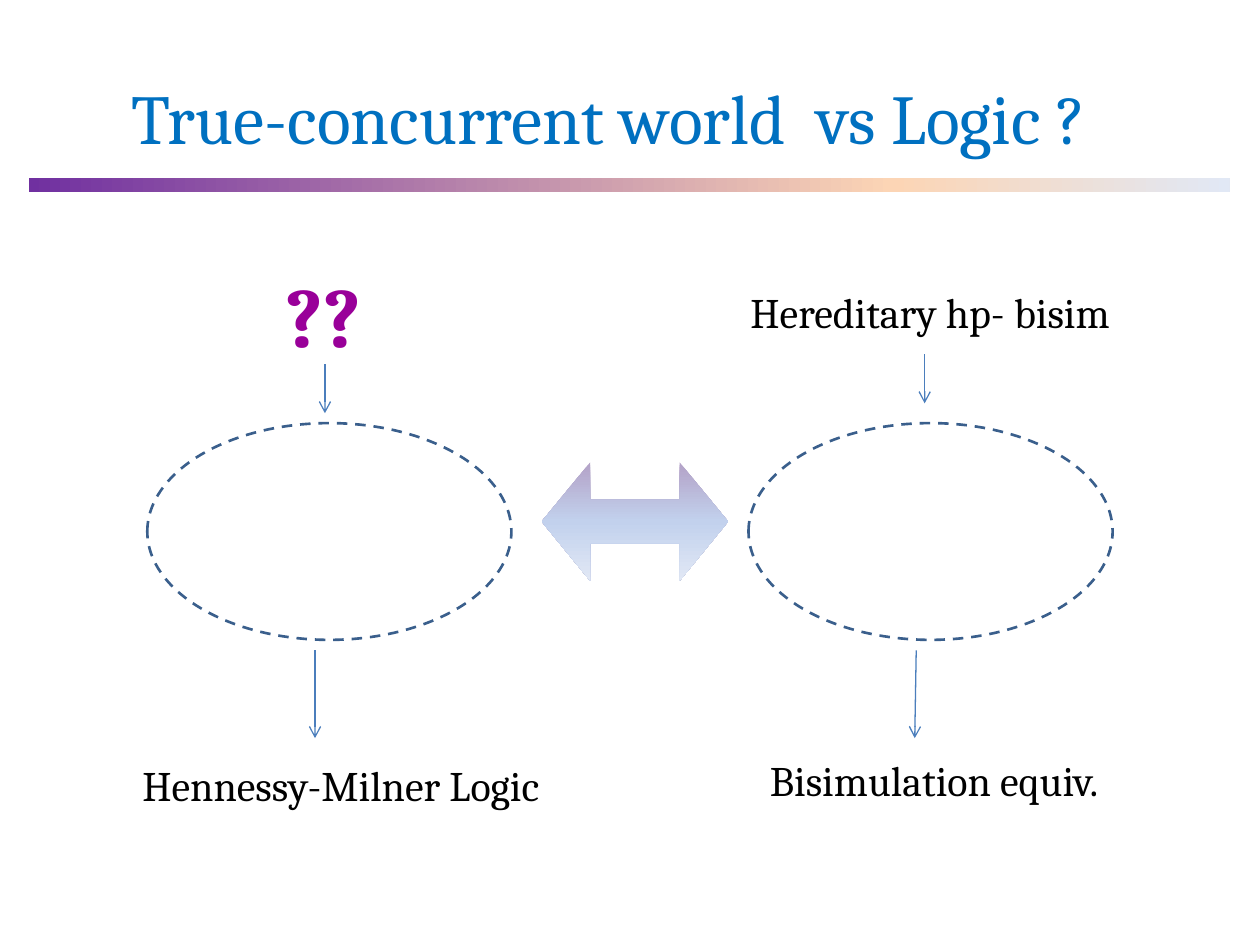
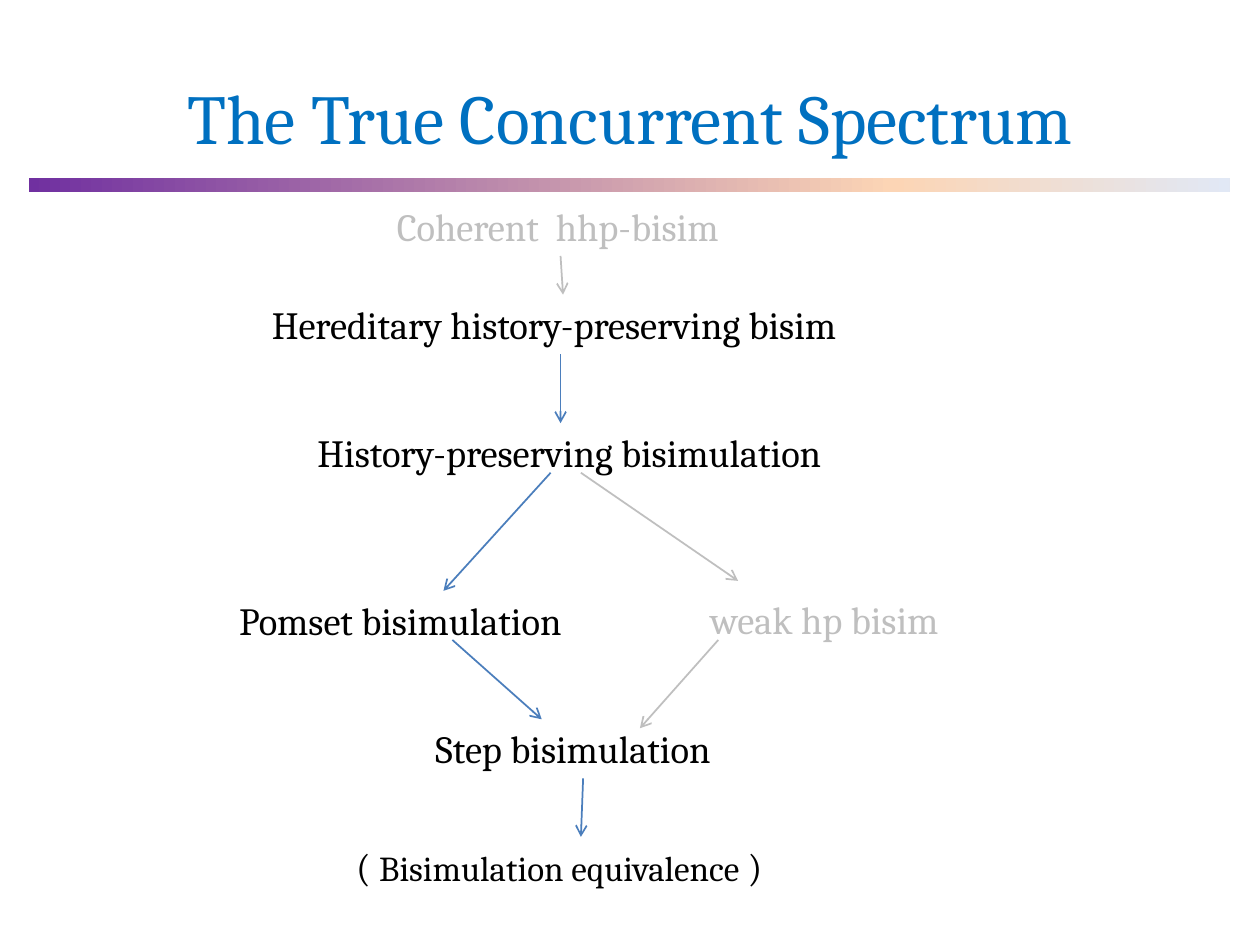
from copy import deepcopy
from dataclasses import dataclass

from lxml.etree import SubElement
from pptx import Presentation
from pptx.dml.color import RGBColor
from pptx.enum.dml import MSO_LINE
from pptx.enum.shapes import MSO_CONNECTOR, MSO_SHAPE
from pptx.enum.text import MSO_ANCHOR, MSO_AUTO_SIZE, PP_ALIGN
from pptx.oxml.ns import qn
from pptx.shapes.autoshape import Shape
from pptx.shapes.connector import Connector
from pptx.slide import Slide
from pptx.util import Cm, Pt

FONT = "Cambria"
BLACK = RGBColor(0x00, 0x00, 0x00)
GREY = RGBColor(0xBF, 0xBF, 0xBF)
TITLE_BLUE = RGBColor(0x00, 0x70, 0xC0)
ARROW_BLUE = RGBColor(0x4B, 0x7E, 0xBC)
OUTLINE_BLUE = RGBColor(0x3A, 0x5F, 0x8C)
MAGENTA = RGBColor(0x99, 0x00, 0x99)
PURPLE = RGBColor(0x70, 0x30, 0xA0)
PEACH = RGBColor(0xFC, 0xD5, 0xB5)
LILAC = RGBColor(0xB3, 0xA2, 0xC7)
SKY = RGBColor(0xC2, 0xD1, 0xED)
PALE_BLUE = RGBColor(0xE1, 0xE8, 0xF5)

BAND_STOPS = [(0, PURPLE), (0.72, PEACH), (1, PALE_BLUE)]
EXCHANGE_STOPS = [(0, LILAC), (0.5, SKY), (1, PALE_BLUE)]


@dataclass(frozen=True)
class Label:
    """Text on one line with its box in centimetres."""

    text: str
    left: float
    top: float
    width: float
    height: float = 1.19
    size: int = 22
    color: RGBColor = BLACK
    bold: bool = False
    centred: bool = False
    anchor: MSO_ANCHOR = MSO_ANCHOR.TOP


@dataclass(frozen=True)
class Arrow:
    """Arrow between two points in centimetres."""

    start: tuple[float, float]
    end: tuple[float, float]
    color: RGBColor = ARROW_BLUE
    weight: float = 1


WORLD_LABELS = [
    Label("??", 0.41, 5.18, 12.22, 2.16, 48, MAGENTA, True, True),
    Label("Hereditary hp- bisim", 14.88, 5.66, 8.23, 1.27, 24),
    Label("Bisimulation equiv.", 15.27, 15.09, 7.57, 1.27, 24),
    Label("Hennessy-Milner Logic", 2.62, 15.19, 9.09, 1.27, 24),
]
WORLD_ARROWS = [
    Arrow((18.64, 7.14), (18.64, 8.13), weight=0.75),
    Arrow((18.47, 13.11), (18.44, 14.88), weight=0.75),
    Arrow((6.55, 7.34), (6.55, 8.33), weight=0.75),
    Arrow((6.35, 13.11), (6.35, 14.88), weight=0.75),
]
SPECTRUM_LABELS = [
    Label("Coherent  hhp-bisim", 7.75, 3.96, 7.52, color=GREY),
    Label("Hereditary history-preserving bisim", 5.23, 5.94, 12.65),
    Label("History-preserving bisimulation", 6.15, 8.53, 11.35),
    Label("Pomset bisimulation", 4.57, 11.91, 7.47),
    Label("weak hp bisim", 14.07, 11.89, 5.36, color=GREY),
]
STEP = Label("Step bisimulation", 8.53, 14.5, 6.45)
EQUIVALENCE = Label("( ", 6.93, 16.87, 9.17)
SPECTRUM_ARROWS = [
    Arrow((11.3, 5.16), (11.35, 5.94), GREY),
    Arrow((11.3, 7.14), (11.3, 8.53)),
    Arrow((11.1, 9.53), (8.94, 11.91)),
    Arrow((11.71, 9.53), (14.88, 11.71), GREY),
    Arrow((9.12, 12.9), (10.92, 14.5)),
    Arrow((14.48, 12.9), (12.9, 14.68), GREY),
]
STEP_TO_EQUIVALENCE = Arrow((11.76, 15.69), (11.71, 16.87))


def draw_label(slide: Slide, label: Label) -> Shape:
    """Draw a label and return its box."""
    box = slide.shapes.add_textbox(
        Cm(label.left), Cm(label.top), Cm(label.width), Cm(label.height)
    )
    frame = box.text_frame
    frame.text = label.text
    frame.word_wrap = label.centred
    frame.vertical_anchor = label.anchor
    if not label.centred:
        frame.auto_size = MSO_AUTO_SIZE.SHAPE_TO_FIT_TEXT
    paragraph = frame.paragraphs[0]
    paragraph.alignment = PP_ALIGN.CENTER if label.centred else PP_ALIGN.LEFT
    style_run(paragraph.runs[0], label.size, label.color, label.bold)
    return box


def style_run(run, size: int, color: RGBColor, bold: bool = False) -> None:
    """Give a run its font."""
    run.font.name = FONT
    run.font.size = Pt(size)
    run.font.color.rgb = color
    run.font.bold = bold


def draw_arrow(slide: Slide, arrow: Arrow) -> Connector:
    """Draw a straight line with an open head at its end."""
    line = slide.shapes.add_connector(
        MSO_CONNECTOR.STRAIGHT, *map(Cm, arrow.start + arrow.end)
    )
    line.line.color.rgb = arrow.color
    line.line.width = Pt(arrow.weight)
    SubElement(line.line._get_or_add_ln(), qn("a:tailEnd"), type="arrow")
    SubElement(line._element.spPr, qn("a:effectLst"))
    return line


def draw_shape(
    slide: Slide, preset: MSO_SHAPE, left: float, top: float, width: float, height: float
) -> Shape:
    """Draw a preset shape without a shadow."""
    shape = slide.shapes.add_shape(preset, Cm(left), Cm(top), Cm(width), Cm(height))
    shape.shadow.inherit = False
    return shape


def fill_gradient(shape: Shape, stops: list[tuple[float, RGBColor]], angle: int) -> None:
    """Fill a shape with a linear gradient and no outline."""
    shape.line.fill.background()
    shape.fill.gradient()
    shape.fill.gradient_angle = angle
    stop_list = shape._element.spPr.find(qn("a:gradFill")).find(qn("a:gsLst"))
    while len(stop_list) < len(stops):
        stop_list.append(deepcopy(stop_list[-1]))
    for stop, (position, color) in zip(shape.fill.gradient_stops, stops):
        stop.position = position
        stop.color.rgb = color


def add_titled_slide(deck, title: str, left: float, width: float) -> Slide:
    """Add a slide with the band and a title."""
    slide = deck.slides.add_slide(deck.slide_layouts[6])
    band = draw_shape(slide, MSO_SHAPE.RECTANGLE, 0.58, 3.58, 24.21, 0.3)
    fill_gradient(band, BAND_STOPS, 0)
    draw_label(
        slide,
        Label(title, left, 0.76, width, 3.18, 40, TITLE_BLUE,
              centred=True, anchor=MSO_ANCHOR.MIDDLE),
    )
    return slide


def build_world(deck) -> None:
    """Build the slide that sets the concurrent world against logic."""
    slide = add_titled_slide(deck, "True-concurrent world  vs Logic ?", 0.2, 24.13)
    for label in WORLD_LABELS:
        draw_label(slide, label)
    for arrow in WORLD_ARROWS:
        draw_arrow(slide, arrow)
    for left in (2.97, 15.09):
        world = draw_shape(slide, MSO_SHAPE.OVAL, left, 8.53, 7.34, 4.37)
        world.fill.background()
        world.line.color.rgb = OUTLINE_BLUE
        world.line.width = Pt(1.5)
        world.line.dash_style = MSO_LINE.DASH
    exchange = draw_shape(slide, MSO_SHAPE.LEFT_RIGHT_ARROW, 10.92, 9.32, 3.76, 2.39)
    exchange.adjustments[0] = 0.37
    exchange.adjustments[1] = 0.41
    fill_gradient(exchange, EXCHANGE_STOPS, 270)


def build_spectrum(deck) -> None:
    """Build the slide that orders the equivalences."""
    slide = add_titled_slide(deck, "The True Concurrent Spectrum", 1.27, 22.86)
    for label in SPECTRUM_LABELS:
        draw_label(slide, label)
    step = draw_label(slide, STEP)
    equivalence = draw_label(slide, EQUIVALENCE)
    for text, size in (("Bisimulation equivalence ", 20), (")", 22)):
        run = equivalence.text_frame.paragraphs[0].add_run()
        run.text = text
        style_run(run, size, BLACK)
    for arrow in SPECTRUM_ARROWS:
        draw_arrow(slide, arrow)
    draw_arrow(slide, STEP_TO_EQUIVALENCE).begin_connect(step, 2)


def main() -> None:
    """Build and save the deck."""
    deck = Presentation()
    deck.slide_width = Cm(25.4)
    deck.slide_height = Cm(19.05)
    build_world(deck)
    build_spectrum(deck)
    deck.save("out.pptx")


if __name__ == "__main__":
    main()
